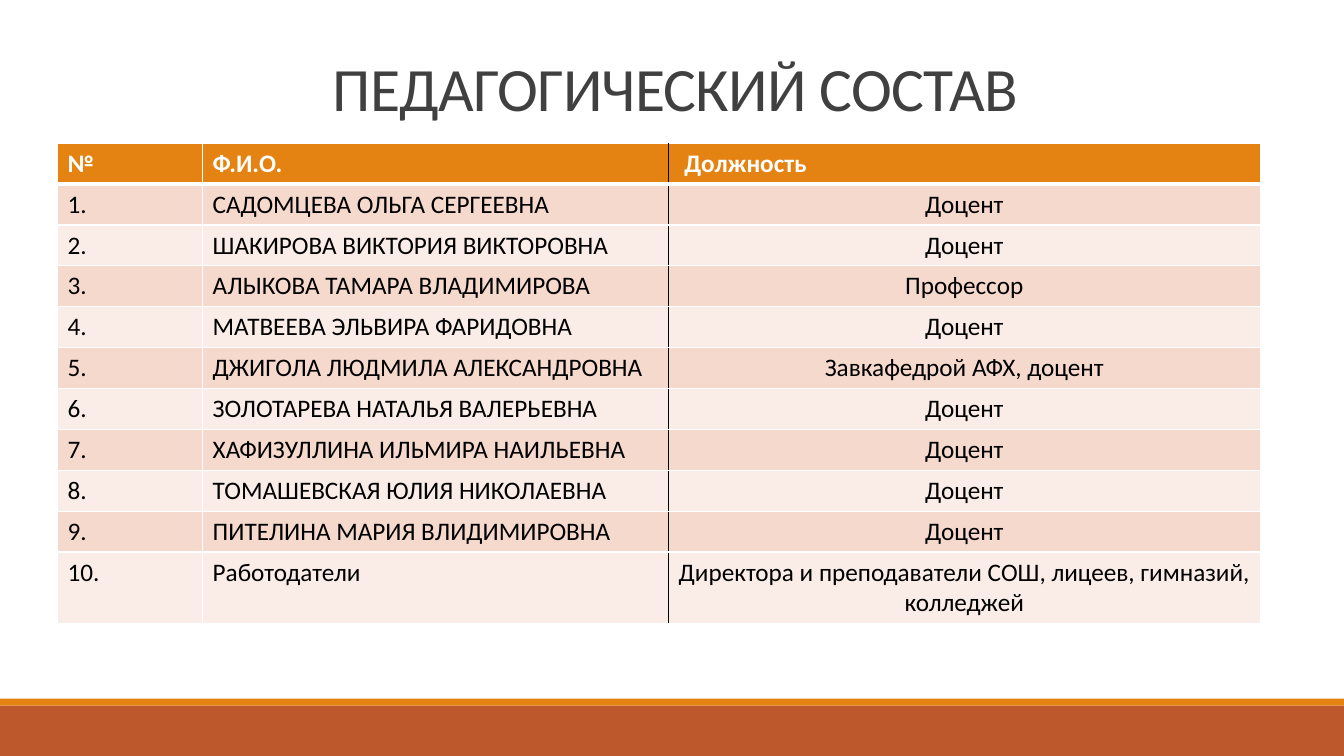
"""Build the teaching staff slide with its table of names and positions."""
from dataclasses import dataclass

from lxml import etree
from pptx import Presentation
from pptx import util as u
from pptx.dml.color import RGBColor
from pptx.enum import shapes, text
from pptx.oxml import ns

COLOURS = {
    "orange": "E48312", "rust": "BD582C", "title": "404040", "white": "FFFFFF",
    "black": "000000", "odd": "F5D9CC", "even": "FAEDE7",
}
WIDTH, HEIGHT = u.Inches(13.333), u.Inches(7.5)
COLUMN_SHARES = (10.8, 34.65, 44.05)
ROW_SHARE, LAST_ROW_SHARE = 5.4, 9.5
HEADINGS = ("№", "Ф.И.О.", "Должность")
DIVIDED_COLUMN = 2


@dataclass(frozen=True)
class Area:
    """A rectangle in percent of the slide's width and height."""
    left: float
    top: float
    width: float
    height: float

    def box(self) -> tuple[int, int, int, int]:
        """Give the rectangle in EMU."""
        return across(self.left), down(self.top), across(self.width), down(self.height)


@dataclass(frozen=True)
class Band:
    """A coloured strip at the foot of the slide."""
    area: Area
    colour: str


@dataclass(frozen=True)
class Member:
    """A person or group and the position held."""
    name: str
    position: str = "Доцент"


BANDS = (
    Band(Area(0, 93.33, 100, 6.67), "rust"),
    Band(Area(0, 92.4, 100, 0.93), "orange"),
)
STAFF = (
    Member("САДОМЦЕВА ОЛЬГА СЕРГЕЕВНА"),
    Member("ШАКИРОВА ВИКТОРИЯ ВИКТОРОВНА"),
    Member("АЛЫКОВА ТАМАРА ВЛАДИМИРОВА", "Профессор"),
    Member("МАТВЕЕВА ЭЛЬВИРА ФАРИДОВНА"),
    Member("ДЖИГОЛА ЛЮДМИЛА АЛЕКСАНДРОВНА", "Завкафедрой АФХ, доцент"),
    Member("ЗОЛОТАРЕВА НАТАЛЬЯ ВАЛЕРЬЕВНА"),
    Member("ХАФИЗУЛЛИНА ИЛЬМИРА НАИЛЬЕВНА"),
    Member("ТОМАШЕВСКАЯ ЮЛИЯ НИКОЛАЕВНА"),
    Member("ПИТЕЛИНА МАРИЯ ВЛИДИМИРОВНА"),
    Member("Работодатели", "Директора и преподаватели СОШ, лицеев, гимназий, колледжей"),
)


def across(share: float) -> int:
    """Turn a percentage of the slide's width into EMU."""
    return round(WIDTH * share / 100)


def down(share: float) -> int:
    """Turn a percentage of the slide's height into EMU."""
    return round(HEIGHT * share / 100)


def colour(name: str) -> RGBColor:
    """Look up a named colour."""
    return RGBColor.from_string(COLOURS[name])


def write(frame, words: str, *, size: float = 18, ink: str = "black", bold: bool = False,
          align=text.PP_ALIGN.LEFT, leading: float = 1.0, tracking: float = 0) -> None:
    """Put one formatted paragraph into a text frame."""
    paragraph = frame.paragraphs[0]
    paragraph.alignment, paragraph.line_spacing = align, leading
    run = paragraph.add_run()
    run.text = words
    font = run.font
    font.name, font.size, font.bold = "Calibri", u.Pt(size), bold
    font.color.rgb = colour(ink)
    if tracking:
        run._r.get_or_add_rPr().set("spc", str(round(tracking * 100)))


def add_border(cell, side: str, ink: str, points: float) -> None:
    """Draw one side of a table cell."""
    line = etree.SubElement(cell._tc.get_or_add_tcPr(), ns.qn(f"a:ln{side}"),
                            w=str(u.Pt(points)))
    fill = etree.SubElement(line, ns.qn("a:solidFill"))
    etree.SubElement(fill, ns.qn("a:srgbClr"), val=COLOURS[ink])


def add_band(slide, band: Band) -> None:
    """Draw a strip at the foot."""
    strip = slide.shapes.add_shape(shapes.MSO_SHAPE.RECTANGLE, *band.area.box())
    strip.shadow.inherit = False
    strip.fill.solid()
    strip.fill.fore_color.rgb = colour(band.colour)
    strip.line.fill.background()


def add_title(slide, words: str, area: Area) -> None:
    """Place and fill the title placeholder."""
    title = slide.shapes.title
    title.left, title.top, title.width, title.height = area.box()
    frame = title.text_frame
    frame.auto_size = text.MSO_AUTO_SIZE.NONE
    frame.vertical_anchor = text.MSO_ANCHOR.BOTTOM
    write(frame, words, size=44, ink="title", align=text.PP_ALIGN.CENTER,
          leading=0.85, tracking=-0.5)


def format_cell(cell, row: int, column: int, words: str) -> None:
    """Fill, border and write one table cell."""
    heading, divided = row == 0, column == DIVIDED_COLUMN
    add_border(cell, "L", "black" if divided else "white", 1)
    add_border(cell, "R", "black" if column == DIVIDED_COLUMN - 1 else "white", 1)
    add_border(cell, "T", "white", 3 if row == 1 else 1)
    add_border(cell, "B", "white", 3 if heading else 1)
    cell.fill.solid()
    cell.fill.fore_color.rgb = colour("orange" if heading else "odd" if row % 2 else "even")
    if heading and divided:
        cell.margin_left = u.Inches(0.16)
    centred = divided and not heading
    write(cell.text_frame, words, ink="white" if heading else "black", bold=heading,
          align=text.PP_ALIGN.CENTER if centred else text.PP_ALIGN.LEFT)


def add_staff_table(slide, left: float, top: float) -> None:
    """Draw the table of staff."""
    rows = [HEADINGS] + [(f"{number}.", member.name, member.position)
                         for number, member in enumerate(STAFF, 1)]
    heights = [ROW_SHARE] * len(STAFF) + [LAST_ROW_SHARE]
    area = Area(left, top, sum(COLUMN_SHARES), sum(heights))
    table = slide.shapes.add_table(len(rows), len(HEADINGS), *area.box()).table
    for column, share in zip(table.columns, COLUMN_SHARES):
        column.width = across(share)
    for row, share in zip(table.rows, heights):
        row.height = down(share)
    for row, entries in enumerate(rows):
        for column, words in enumerate(entries):
            format_cell(table.cell(row, column), row, column, words)


def main() -> None:
    """Build and save the slide."""
    deck = Presentation()
    deck.slide_width, deck.slide_height = WIDTH, HEIGHT
    slide = deck.slides.add_slide(deck.slide_layouts[5])
    for band in BANDS:
        add_band(slide, band)
    add_title(slide, "ПЕДАГОГИЧЕСКИЙ СОСТАВ", Area(9, 6.8, 82.5, 10.27))
    add_staff_table(slide, 4.28, 18.95)
    deck.save("out.pptx")


if __name__ == "__main__":
    main()
